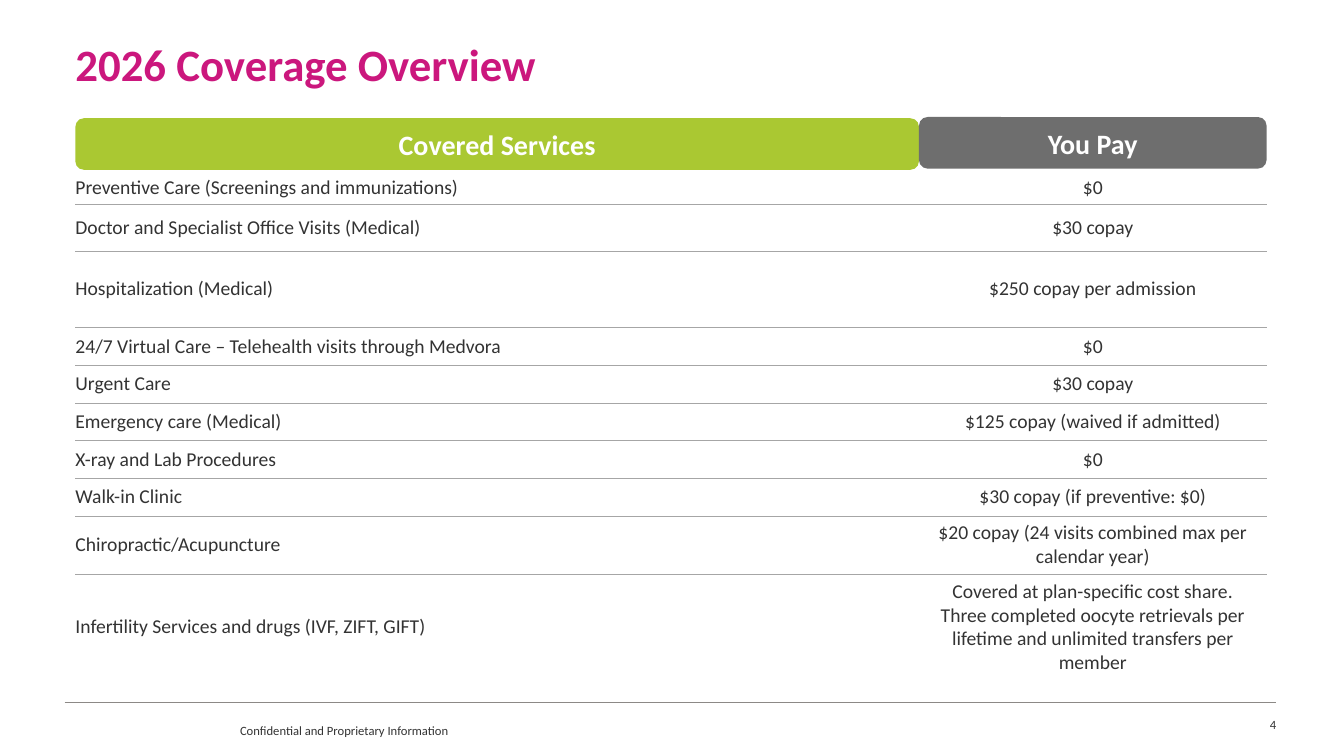
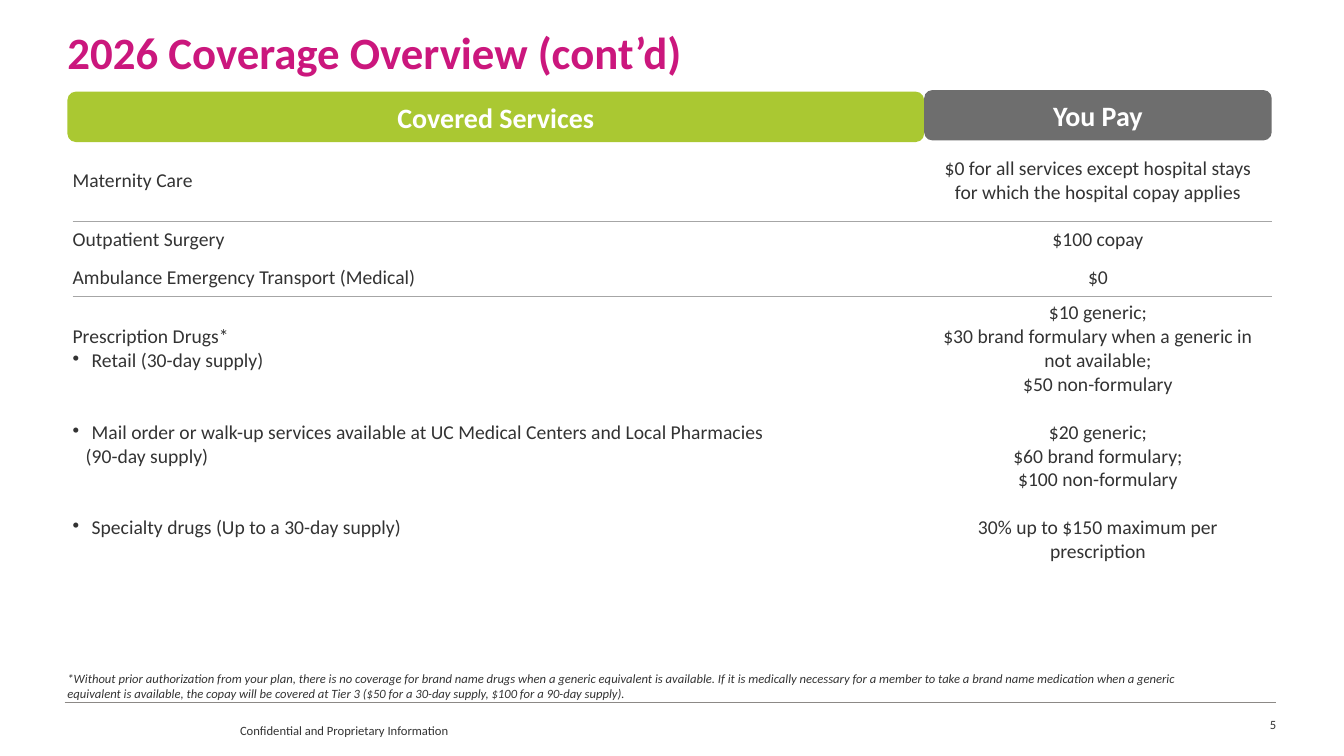
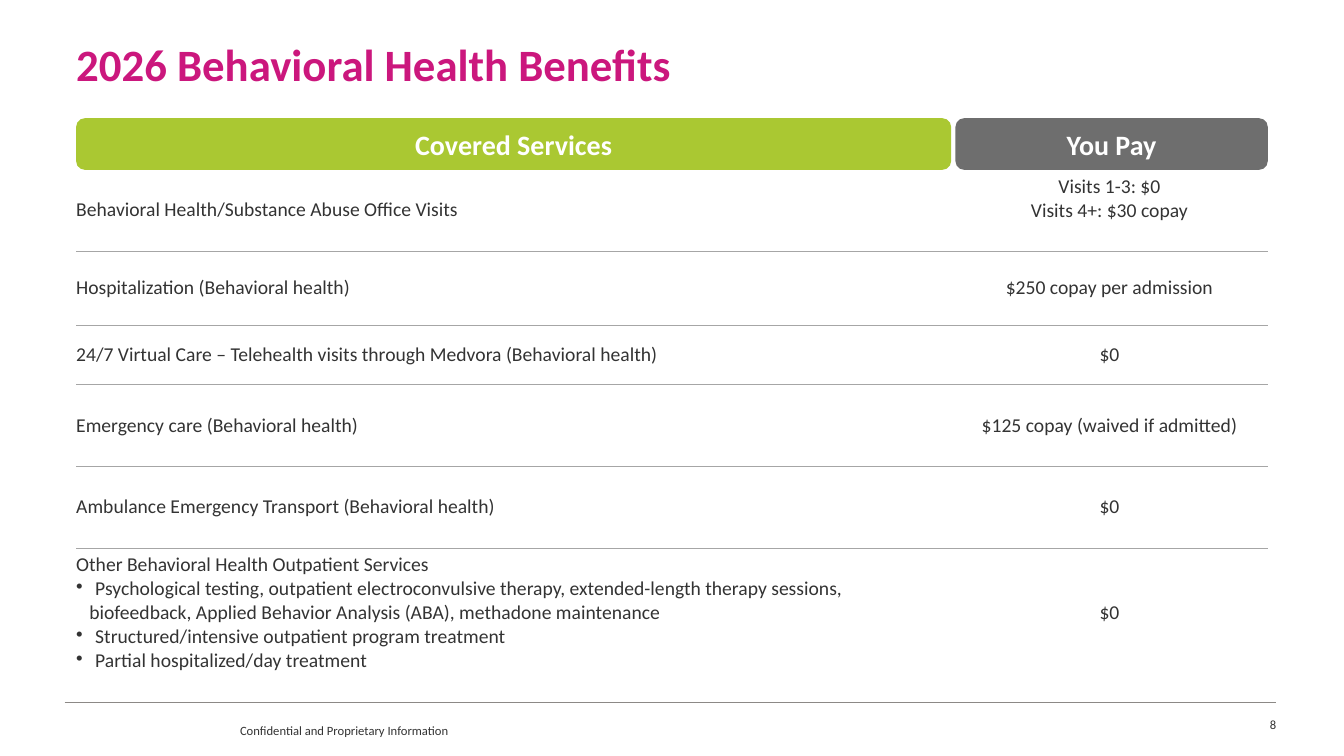
from dataclasses import dataclass
from lxml.etree import SubElement
from pptx import Presentation
from pptx.dml.color import RGBColor
from pptx.enum.shapes import MSO_CONNECTOR, MSO_SHAPE
from pptx.enum.text import MSO_ANCHOR, PP_ALIGN
from pptx.oxml import parse_xml
from pptx.oxml.ns import nsdecls, qn
from pptx.util import Cm, Pt

FONT = "Calibri"
PINK, GREEN, GRAY = "CB177D", "AAC832", "6E6E6E"
INK, WHITE, RULE, EDGE = "333333", "FFFFFF", "A6A6A6", "8C8986"
SIZE = 14
LEAD = 17.1
PAD = 0.13
INDENT = {"plain": (0, 0), "bullet": (0.48, -0.48), "more": (0.33, 0)}


@dataclass
class Line:
    text: str
    kind: str = "plain"
    gap: int = 0


@dataclass
class Row:
    high: float
    left: object
    right: object
    rule: bool = True
    foot: float = PAD


def color(code):
    return RGBColor.from_string(code)


def write(para, text, size, code=INK, bold=False, slant=False):
    run = para.add_run()
    run.text = text
    font = run.font
    font.name, font.size, font.bold, font.italic = FONT, Pt(size), bold, slant
    font.color.rgb = color(code)


def strip(frame):
    frame.margin_left = frame.margin_right = frame.margin_top = frame.margin_bottom = 0
    frame.word_wrap = True
    frame.vertical_anchor = MSO_ANCHOR.TOP


def label(slide, box, lines, align=PP_ALIGN.LEFT, slant=False, lead=1.0):
    shape = slide.shapes.add_textbox(*map(Cm, box))
    frame = shape.text_frame
    strip(frame)
    for num, text in enumerate(lines):
        para = frame.add_paragraph() if num else frame.paragraphs[0]
        para.alignment, para.line_spacing = align, lead
        write(para, text, 9, slant=slant)
    return shape


def footer(slide, layout):
    line = slide.shapes.add_connector(
        MSO_CONNECTOR.STRAIGHT, Cm(1.63), Cm(17.7), Cm(32.16), Cm(17.7))
    line.line.color.rgb = color(EDGE)
    line.line.width = Pt(0.5)
    SubElement(line.element.spPr, qn("a:effectLst"))
    note = label(slide, (6.05, 18.21, 11.43, 0.64), ["Confidential and Proprietary Information"])
    for part in (line, note):
        layout.shapes.element.append(part.element)


def title(slide, left, top, text):
    shape = slide.shapes.title
    shape.left, shape.top, shape.width, shape.height = map(Cm, (left, top, 30.5, 2.8))
    strip(shape.text_frame)
    para = shape.text_frame.paragraphs[0]
    para.alignment, para.line_spacing = PP_ALIGN.LEFT, 0.9
    write(para, text, 32, PINK, bold=True)


def tab(slide, box, text, code):
    shape = slide.shapes.add_shape(MSO_SHAPE.ROUNDED_RECTANGLE, *map(Cm, box))
    shape.shadow.inherit = False
    shape.fill.solid()
    shape.fill.fore_color.rgb = color(code)
    shape.line.fill.background()
    frame = shape.text_frame
    frame.vertical_anchor = MSO_ANCHOR.MIDDLE
    frame.paragraphs[0].alignment = PP_ALIGN.CENTER
    write(frame.paragraphs[0], text, 20, WHITE, bold=True)


def edges(cell, above, below):
    props = cell._tc.get_or_add_tcPr()
    sides = (("L", False), ("R", False), ("T", above), ("B", below))
    for num, (side, shown) in enumerate(sides):
        paint = f'<a:solidFill><a:srgbClr val="{RULE}"/></a:solidFill>' if shown else "<a:noFill/>"
        width = int(Pt(0.5))
        props.insert(num, parse_xml(
            f'<a:ln{side} {nsdecls("a")} w="{width}">{paint}</a:ln{side}>'))


def fill(cell, lines, align):
    cell.fill.background()
    cell.vertical_anchor = MSO_ANCHOR.MIDDLE
    frame = cell.text_frame
    for num, line in enumerate([Line(lines)] if isinstance(lines, str) else lines):
        para = frame.add_paragraph() if num else frame.paragraphs[0]
        props = para._p.get_or_add_pPr()
        margin, hang = INDENT[line.kind]
        props.set("marL", str(int(Cm(margin))))
        props.set("indent", str(int(Cm(hang))))
        if line.kind == "bullet":
            SubElement(props, qn("a:buChar")).set("char", "•")
        para.alignment = align
        if line.gap:
            para.space_before = Pt(LEAD * line.gap)
        write(para, line.text, SIZE)


def grid(slide, left, top, wides, rows):
    total = sum(row.high for row in rows)
    frame = slide.shapes.add_table(
        len(rows), 2, Cm(left), Cm(top), Cm(sum(wides)), Cm(total))
    table = frame.table
    table.first_row = table.horz_banding = False
    for col, wide in zip(table.columns, wides):
        col.width = Cm(wide)
    above = False
    for num, row in enumerate(rows):
        table.rows[num].height = Cm(row.high)
        pairs = ((row.left, PP_ALIGN.LEFT), (row.right, PP_ALIGN.CENTER))
        for col, (lines, align) in enumerate(pairs):
            cell = table.cell(num, col)
            fill(cell, lines, align)
            cell.margin_left = Cm(0.25 * col)
            cell.margin_right = Cm(0.25)
            cell.margin_top = Cm(PAD)
            cell.margin_bottom = Cm(row.foot if col else PAD)
            edges(cell, above, row.rule)
        above = row.rule


def page(deck, head, spot, tabs, place, wides, rows, number):
    slide = deck.slides.add_slide(deck.slide_layouts[5])
    title(slide, *spot, head)
    grid(slide, *place, wides, rows)
    for box, text, code in zip(tabs, ("Covered Services", "You Pay"), (GREEN, GRAY)):
        tab(slide, box, text, code)
    label(slide, (24.54, 18.11, 7.62, 0.64), [number], PP_ALIGN.RIGHT, lead=0.9)
    return slide


CARE = [
    Row(0.86, "Preventive Care (Screenings and immunizations)", "$0"),
    Row(1.17, "Doctor and Specialist Office Visits (Medical)", "$30 copay"),
    Row(1.93, "Hospitalization (Medical)", "$250 copay per admission"),
    Row(0.95, "24/7 Virtual Care – Telehealth visits through Medvora", "$0"),
    Row(0.95, "Urgent Care", "$30 copay"),
    Row(0.95, "Emergency care (Medical)", "$125 copay (waived if admitted)"),
    Row(0.95, "X-ray and Lab Procedures", "$0"),
    Row(0.95, "Walk-in Clinic", "$30 copay (if preventive: $0)"),
    Row(1.47, "Chiropractic/Acupuncture", "$20 copay (24 visits combined max per calendar year)"),
    Row(2.65, "Infertility Services and drugs (IVF, ZIFT, GIFT)",
        "Covered at plan-specific cost share. Three completed oocyte retrievals "
        "per lifetime and unlimited transfers per member", False),
]

DRUGS = [
    Row(2.04, "Maternity Care",
        "$0 for all services except hospital stays for which the hospital copay applies"),
    Row(0.94, "Outpatient Surgery", "$100 copay", False),
    Row(0.94, "Ambulance Emergency Transport (Medical)", "$0"),
    Row(6.86, [
        Line("Prescription Drugs*"),
        Line("Retail (30-day supply)", "bullet"),
        Line("Mail order or walk-up services available at UC Medical Centers and Local Pharmacies",
             "bullet", 2),
        Line("(90-day supply)", "more"),
        Line("Specialty drugs (Up to a 30-day supply)", "bullet", 2),
    ], [
        Line("$10 generic;"),
        Line("$30 brand formulary when a generic in not available;"),
        Line("$50 non-formulary"),
        Line("$20 generic;", gap=1),
        Line("$60 brand formulary;"),
        Line("$100 non-formulary"),
        Line("30% up to $150 maximum per prescription", gap=1),
    ], False),
]

MIND = [
    Row(2.05, "Behavioral Health/Substance Abuse Office Visits",
        [Line("Visits 1-3: $0"), Line("Visits 4+: $30 copay")], foot=0.72),
    Row(1.88, "Hospitalization (Behavioral health)", "$250 copay per admission"),
    Row(1.49, "24/7 Virtual Care – Telehealth visits through Medvora (Behavioral health)", "$0"),
    Row(2.05, "Emergency care (Behavioral health)", "$125 copay (waived if admitted)"),
    Row(2.07, "Ambulance Emergency Transport (Behavioral health)", "$0"),
    Row(3.26, [
        Line("Other Behavioral Health Outpatient Services"),
        Line("Psychological testing, outpatient electroconvulsive therapy, "
             "extended-length therapy sessions,", "bullet"),
        Line("biofeedback, Applied Behavior Analysis (ABA), methadone maintenance", "more"),
        Line("Structured/intensive outpatient program treatment", "bullet"),
        Line("Partial hospitalized/day treatment", "bullet"),
    ], "$0", False),
]

NOTE = [
    "*Without prior authorization from your plan, there is no coverage for brand name drugs "
    "when a generic equivalent is available. If it is medically necessary for a member to take "
    "a brand name medication when a generic",
    "equivalent is available, the copay will be covered at Tier 3 "
    "($50 for a 30-day supply, $100 for a 90-day supply).",
]


def main():
    deck = Presentation()
    deck.slide_width, deck.slide_height = Cm(33.87), Cm(19.05)
    first = page(deck, "2026 Coverage Overview", (1.9, 1.07),
                 ((1.9, 2.98, 21.26, 1.3), (23.16, 2.95, 8.76, 1.3)),
                 (1.9, 4.29), (21.26, 8.76), CARE, "4")
    footer(first, deck.slide_layouts[5])
    second = page(deck, "2026 Coverage Overview (cont’d)", (1.7, 0.78),
                  ((1.7, 2.31, 21.59, 1.27), (23.29, 2.27, 8.76, 1.27)),
                  (1.83, 3.54), (21.46, 8.76), DRUGS, "5")
    label(second, (1.7, 16.9, 30.84, 0.89), NOTE, slant=True)
    page(deck, "2026 Behavioral Health Benefits", (1.92, 1.07),
         ((1.92, 2.98, 22.05, 1.3), (24.08, 2.98, 7.87, 1.3)),
         (1.92, 4.27), (22.05, 7.98), MIND, "8")
    deck.save("out.pptx")


if __name__ == "__main__":
    main()
